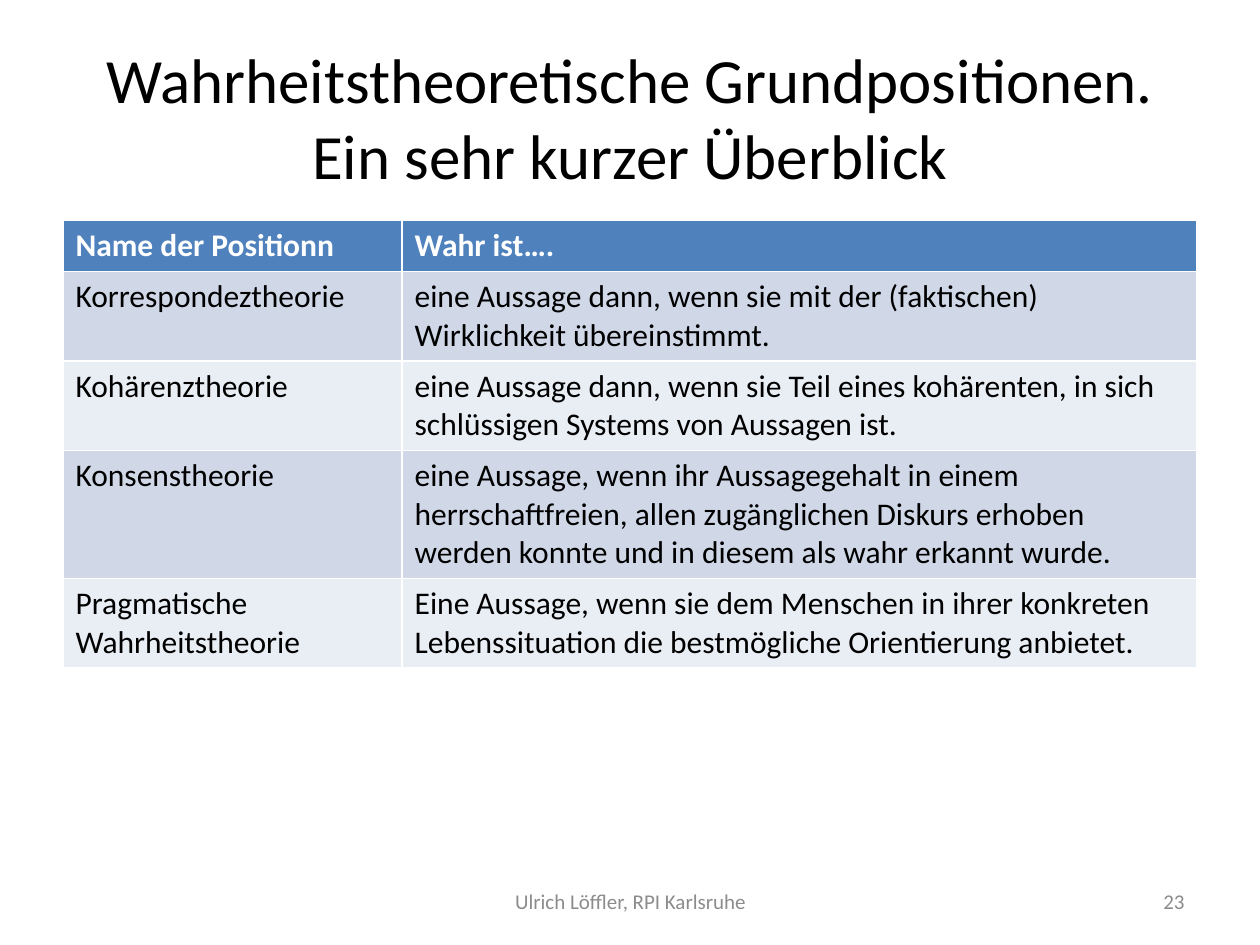
"""Build a slide with a table of theories of truth."""
from dataclasses import dataclass

import pptx
import pptx.dml.color
import pptx.enum.text
import pptx.util

ALIGN = pptx.enum.text.PP_ALIGN
MIDDLE = pptx.enum.text.MSO_ANCHOR.MIDDLE


@dataclass(frozen=True)
class Theme:
    font: str = "Calibri"
    ink: str = "000000"
    paper: str = "FFFFFF"
    head: str = "4F81BD"
    bands: tuple[str, str] = ("D0D8E8", "E9EDF4")
    muted: str = "8C8C8C"
    title: int = 36
    body: int = 18
    small: int = 12


@dataclass(frozen=True)
class Box:
    left: float
    top: float
    width: float
    height: float

    def place(self) -> tuple[int, int, int, int]:
        return tuple(
            round(share * full)
            for share, full in zip(
                (self.left, self.top, self.width, self.height), (WIDE, HIGH) * 2
            )
        )


@dataclass(frozen=True)
class Theory:
    name: str
    claim: str


@dataclass(frozen=True)
class Note:
    text: str
    box: Box
    align: ALIGN


THEME = Theme()
WIDE, HIGH = pptx.util.Inches(10), pptx.util.Inches(7.5)
TITLE = Box(0.05, 0.04, 0.9, 1 / 6)
GRID = Box(0.05, 0.2333, 0.9, 0.2733)
SPLIT = 0.299
LINES = (1, 2, 2, 3, 2)
LINE, PAD = 0.305, 0.1

HEAD = Theory("Name der Positionn", "Wahr ist….")
ROWS = [
    Theory(
        "Korrespondeztheorie",
        "eine Aussage dann, wenn sie mit der (faktischen) Wirklichkeit übereinstimmt.",
    ),
    Theory(
        "Kohärenztheorie",
        "eine Aussage dann, wenn sie Teil eines kohärenten, in sich schlüssigen "
        "Systems von Aussagen ist.",
    ),
    Theory(
        "Konsenstheorie",
        "eine Aussage, wenn ihr Aussagegehalt in einem herrschaftfreien, allen "
        "zugänglichen Diskurs erhoben werden konnte und in diesem als wahr "
        "erkannt wurde.",
    ),
    Theory(
        "Pragmatische Wahrheitstheorie",
        "Eine Aussage, wenn sie dem Menschen in ihrer konkreten Lebenssituation "
        "die bestmögliche Orientierung anbietet.",
    ),
]
NOTES = [
    Note("Ulrich Löffler, RPI Karlsruhe", Box(0.342, 0.927, 0.317, 0.053), ALIGN.CENTER),
    Note("23", Box(0.717, 0.927, 0.233, 0.053), ALIGN.RIGHT),
]


def tint(code: str) -> pptx.dml.color.RGBColor:
    return pptx.dml.color.RGBColor.from_string(code)


def write(frame, text: str, size: int, ink: str, align=ALIGN.LEFT, bold=False) -> None:
    frame.text = text
    frame.word_wrap = True
    line = frame.paragraphs[0]
    line.alignment = align
    font = line.font
    font.name, font.size, font.bold = THEME.font, pptx.util.Pt(size), bold
    font.color.rgb = tint(ink)


def add_title(slide, text: str) -> None:
    title = slide.shapes.title
    title.left, title.top, title.width, title.height = TITLE.place()
    frame = title.text_frame
    write(frame, text, THEME.title, THEME.ink, ALIGN.CENTER)
    frame.vertical_anchor = MIDDLE
    frame.auto_size = pptx.enum.text.MSO_AUTO_SIZE.NONE


def add_grid(slide, rows: list[Theory]) -> None:
    place = GRID.place()
    table = slide.shapes.add_table(len(rows), 2, *place).table
    for col, share in zip(table.columns, (SPLIT, 1 - SPLIT)):
        col.width = round(place[2] * share)
    for at, (row, item, count) in enumerate(zip(table.rows, rows, LINES)):
        row.height = pptx.util.Inches(count * LINE + PAD)
        top = at == 0
        fill = THEME.head if top else THEME.bands[(at - 1) % 2]
        ink = THEME.paper if top else THEME.ink
        for cell, text in zip(row.cells, (item.name, item.claim)):
            cell.fill.solid()
            cell.fill.fore_color.rgb = tint(fill)
            write(cell.text_frame, text, THEME.body, ink, bold=top)


def add_note(slide, note: Note) -> None:
    frame = slide.shapes.add_textbox(*note.box.place()).text_frame
    write(frame, note.text, THEME.small, THEME.muted, note.align)
    frame.vertical_anchor = MIDDLE


def main() -> None:
    deck = pptx.Presentation()
    deck.slide_width, deck.slide_height = WIDE, HIGH
    slide = deck.slides.add_slide(deck.slide_layouts.get_by_name("Title Only"))
    add_title(slide, "Wahrheitstheoretische Grundpositionen. Ein sehr kurzer Überblick")
    add_grid(slide, [HEAD, *ROWS])
    for note in NOTES:
        add_note(slide, note)
    deck.save("out.pptx")


if __name__ == "__main__":
    main()
